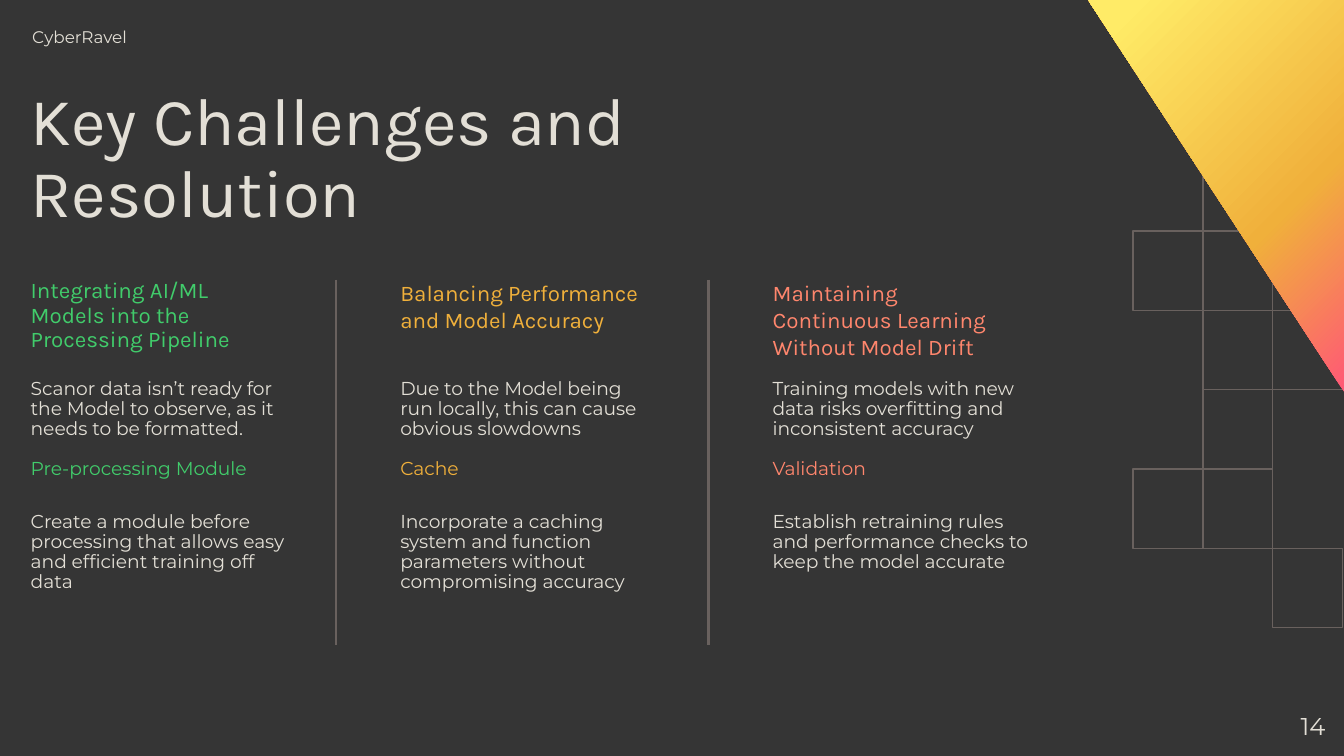
from copy import deepcopy

from lxml import etree
from pptx import Presentation
from pptx.dml.color import RGBColor
from pptx.enum.shapes import MSO_CONNECTOR, MSO_SHAPE
from pptx.enum.text import PP_ALIGN
from pptx.oxml.ns import qn
from pptx.util import Inches, Pt

RECT = MSO_SHAPE.RECTANGLE
LINE = MSO_CONNECTOR.STRAIGHT
LEFT, RIGHT = PP_ALIGN.LEFT, PP_ALIGN.RIGHT
HEAD, BODY = "Karla", "Montserrat"
DARK, CREAM, GRAY = "353535", "E3DFD6", "69615E"
GREEN, GOLD, CORAL = "41CC6B", "F0B03B", "FF866D"


def color(code):
    return RGBColor.from_string(code)


class Deck:
    """Holds the style and the current slide."""

    def __init__(self):
        self.show = Presentation()
        self.show.slide_width = Inches(10)
        self.show.slide_height = Inches(10 * 9 / 16)
        self.slide = self.show.slides.add_slide(self.show.slide_layouts[6])
        self.shapes = self.slide.shapes
        fill = self.slide.background.fill
        fill.solid()
        fill.fore_color.rgb = color(DARK)

    def text(self, box, lines, size, font=BODY, inset=(0.1, 0.1, 0.1, 0.1),
             ratio=1.0, align=LEFT, gap=0):
        frame = self.shapes.add_textbox(*map(Inches, box)).text_frame
        frame.word_wrap = True
        (frame.margin_left, frame.margin_top,
         frame.margin_right, frame.margin_bottom) = map(Inches, inset)
        for i, (words, tint) in enumerate(lines):
            para = frame.add_paragraph() if i else frame.paragraphs[0]
            para.text = words
            para.alignment = align
            para.line_spacing = ratio
            para.space_before = Pt(gap if i else 0)
            para.font.name = font
            para.font.size = Pt(size)
            para.font.color.rgb = color(tint)

    def cell(self, left, top, width, height):
        shape = self.shapes.add_shape(RECT, *map(Inches, (left, top, width, height)))
        shape.shadow.inherit = False
        shape.fill.background()
        shape.line.color.rgb = color(GRAY)
        shape.line.width = Pt(0.75)

    def wedge(self, points, stops):
        start, *rest = [(Inches(x), Inches(y)) for x, y in points]
        pen = self.shapes.build_freeform(*start)
        pen.add_line_segments(rest, close=True)
        shape = pen.convert_to_shape()
        shape.shadow.inherit = False
        shape.line.fill.background()
        shape.fill.gradient()
        shape.fill.gradient_angle = 135
        group = next(shape._element.spPr.iter(qn("a:gsLst")))
        while len(group) < len(stops):
            group.append(deepcopy(group[0]))
        for stop, (place, tint) in zip(shape.fill.gradient_stops, stops):
            stop.color.rgb = color(tint)
            stop.position = place

    def rule(self, x, top, end):
        line = self.shapes.add_connector(LINE, *map(Inches, (x, top, x, end)))
        line.line.color.rgb = color(GRAY)
        line.line.width = Pt(1.5)
        etree.SubElement(line._element.spPr, qn("a:effectLst"))


def main():
    deck = Deck()
    grid = [(1, 0), (2, 5), (2, 0), (0, 1), (1, 1), (2, 1), (0, 4),
            (1, 2), (2, 2), (1, 4), (1, 3)]
    for col, row in grid:
        deck.cell(8.43 + 0.52 * col, 1.13 + 0.59 * row, 0.52, 0.59)
    deck.wedge([(8.09, -0.01), (10.01, -0.01), (10.01, 2.93)],
               [(0, "FF5777"), (0.37, GOLD), (0.92, "FFEB67"), (1, "FFEB67")])

    deck.text((0.04, 0.12, 1.73, 0.21), [("CyberRavel", CREAM)], 9,
              inset=(0.2, 0.1, 0.1, 0.1))
    deck.text((0.13, 0.55, 6.62, 1.29), [("Key Challenges and Resolution", CREAM)],
              36, HEAD, ratio=0.9)

    topics = [
        (0.13, GREEN, 0.9, "Integrating AI/ML Models into the Processing Pipeline",
         "Scanor data isn’t ready for the Model to observe, as it needs to be formatted.",
         "Pre-processing Module",
         "Create a module before processing that allows easy and efficient training off data"),
        (2.88, GOLD, 1.0, "Balancing Performance and Model Accuracy",
         "Due to the Model being run locally, this can cause obvious slowdowns",
         "Cache",
         "Incorporate a caching system and function parameters without compromising accuracy"),
        (5.65, CORAL, 1.0, "Maintaining Continuous Learning Without Model Drift",
         "Training models with new data risks overfitting and inconsistent accuracy",
         "Validation",
         "Establish retraining rules and performance checks to keep the model accurate"),
    ]
    inset = (0.1, 0.1, 0, 0.1)
    for left, tint, ratio, head, issue, fix, plan in topics:
        deck.text((left, 2.08, 2.01, 0.57), [(head, tint)], 12, HEAD,
                  (0.1, 0, 0.1, 0.1), ratio)
        deck.text((left, 2.72, 2.01, 0.97), [(issue, CREAM), (fix, tint)], 10,
                  inset=inset, ratio=0.9, gap=10.8)
        deck.text((left, 3.71, 2.01, 0.97), [(plan, CREAM)], 10,
                  inset=inset, ratio=0.9)
    for x in (2.5, 5.27):
        deck.rule(x, 2.08, 4.8)

    deck.text((9.36, 5.19, 0.6, 0.43), [("14", CREAM)], 13, align=RIGHT)
    deck.show.save("out.pptx")


if __name__ == "__main__":
    main()
